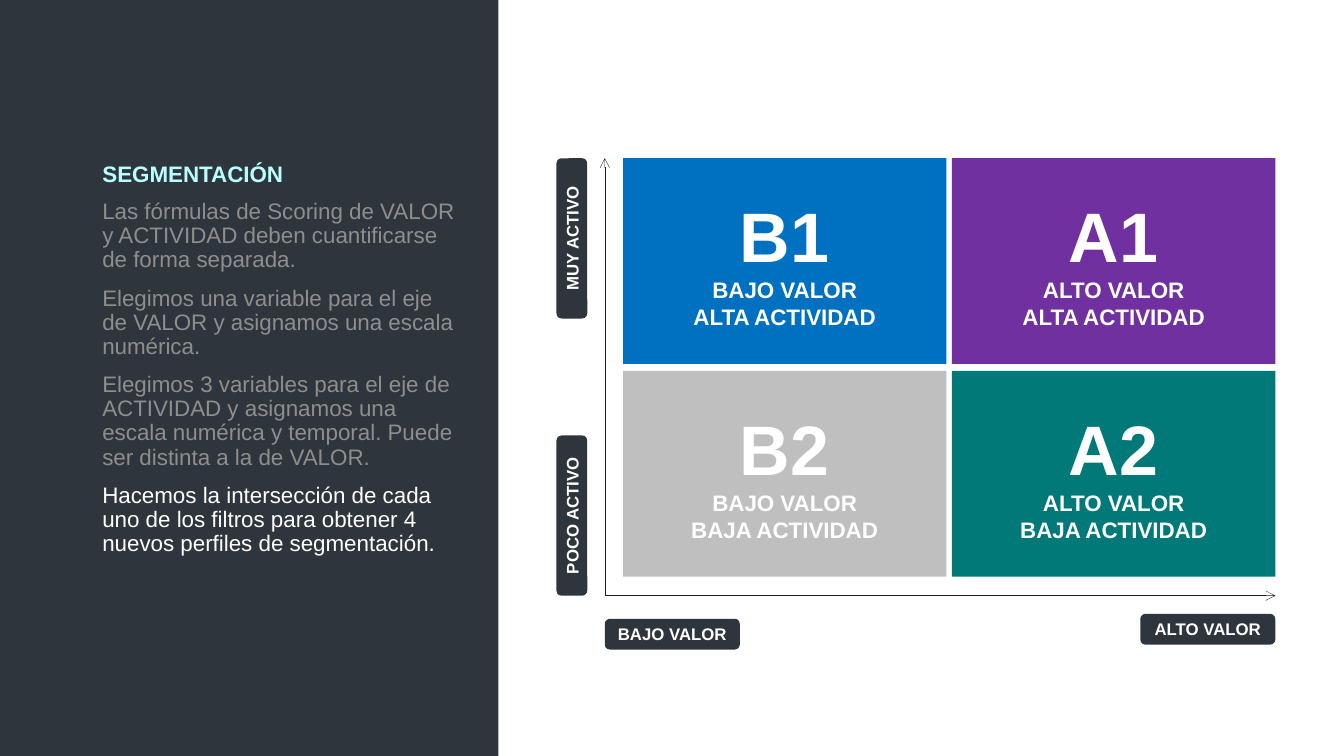
from lxml import etree
from pptx import Presentation
from pptx.dml.color import RGBColor
from pptx.enum.shapes import MSO_CONNECTOR, MSO_SHAPE
from pptx.enum.text import MSO_ANCHOR, MSO_AUTO_SIZE, PP_ALIGN
from pptx.oxml.ns import qn
from pptx.util import Pt

DARK = RGBColor(0x2F, 0x35, 0x3D)
WHITE = RGBColor(0xFF, 0xFF, 0xFF)
AQUA = RGBColor(0xB9, 0xFF, 0xFF)
GRAY = RGBColor(0x8E, 0x8E, 0x8E)
AXIS = RGBColor(0x1C, 0x1C, 0x1C)
BLUE = RGBColor(0x00, 0x70, 0xC0)
PURPLE = RGBColor(0x70, 0x30, 0xA0)
SILVER = RGBColor(0xBF, 0xBF, 0xBF)
TEAL = RGBColor(0x01, 0x79, 0x78)

TOP, RIGHT = 113, 911
AXIS_X, AXIS_Y = 432, 425.5
CELL_X, CELL_W, CELL_H = 445, 231, 147
STEP_X, STEP_Y = 235, 152
TEXT_X, TEXT_W = 66, 266
LABEL_H, LABEL_W, SIDE_LABEL_W = 22, 96.5, 114.5
SIDE_LABEL_MID = 408.5

STEPS = [
    ("Las fórmulas de Scoring de VALOR y ACTIVIDAD deben cuantificarse de forma separada.", GRAY),
    ("Elegimos una variable para el eje de VALOR y asignamos una escala numérica.", GRAY),
    ("Elegimos 3 variables para el eje de ACTIVIDAD y asignamos una escala numérica y temporal. "
     "Puede ser distinta a la de VALOR.", GRAY),
    ("Hacemos la intersección de cada uno de los filtros para obtener 4 nuevos perfiles "
     "de segmentación.", WHITE),
]
SEGMENTS = [
    [("B1", "BAJO VALOR", "ALTA ACTIVIDAD", BLUE), ("A1", "ALTO VALOR", "ALTA ACTIVIDAD", PURPLE)],
    [("B2", "BAJO VALOR", "BAJA ACTIVIDAD", SILVER), ("A2", "ALTO VALOR", "BAJA ACTIVIDAD", TEAL)],
]


def write(tf, lines, align, spacing=1.0, before=0, anchor=MSO_ANCHOR.MIDDLE):
    frame = {"word_wrap": True, "auto_size": MSO_AUTO_SIZE.NONE, "vertical_anchor": anchor}
    for name, value in frame.items():
        setattr(tf, name, value)
    for i, (text, size, color, bold) in enumerate(lines):
        p = tf.paragraphs[0] if i == 0 else tf.add_paragraph()
        layout = {"alignment": align, "line_spacing": spacing, "space_before": Pt(before if i else 0)}
        for name, value in layout.items():
            setattr(p, name, value)
        r = p.add_run()
        r.text = text
        for name, value in {"name": "Arial", "size": Pt(size), "bold": bold}.items():
            setattr(r.font, name, value)
        r.font.color.rgb = color


def add_block(s, kind, x, y, w, h, color, lines=()):
    sp = s.shapes.add_shape(kind, Pt(x), Pt(y), Pt(w), Pt(h))
    sp.shadow.inherit = False
    sp.fill.solid()
    sp.fill.fore_color.rgb = color
    sp.line.fill.background()
    write(sp.text_frame, lines, PP_ALIGN.CENTER)
    return sp


def add_label(s, text, x, y, w=LABEL_W, rotation=0):
    sp = add_block(s, MSO_SHAPE.ROUNDED_RECTANGLE, x, y, w, LABEL_H, DARK, [(text, 12, WHITE, True)])
    sp.rotation = rotation


def add_side_label(s, text, top):
    x = SIDE_LABEL_MID - SIDE_LABEL_W / 2
    y = top + (SIDE_LABEL_W - LABEL_H) / 2
    add_label(s, text, x, y, SIDE_LABEL_W, 270)


def add_axis(s, x, y):
    line = s.shapes.add_connector(MSO_CONNECTOR.STRAIGHT, Pt(AXIS_X), Pt(AXIS_Y), Pt(x), Pt(y))
    line.line.color.rgb = AXIS
    line.line.width = Pt(0.25)
    etree.SubElement(line.line._get_or_add_ln(), qn("a:tailEnd"), type="arrow")
    etree.SubElement(line._element.spPr, qn("a:effectLst"))


def add_explanation(s):
    title = s.shapes.title
    box = {"left": Pt(TEXT_X), "top": Pt(TOP), "width": Pt(TEXT_W), "height": Pt(26)}
    for name, value in box.items():
        setattr(title, name, value)
    write(title.text_frame, [("SEGMENTACIÓN", 16, AQUA, True)], PP_ALIGN.LEFT, 0.9,
          anchor=MSO_ANCHOR.TOP)
    panel = add_block(s, MSO_SHAPE.RECTANGLE, 0, 0, 356, 540, DARK)
    title._element.addprevious(panel._element)
    body = s.shapes.add_textbox(Pt(TEXT_X), Pt(139.5), Pt(TEXT_W), Pt(346.5))
    lines = [(text, 16, color, False) for text, color in STEPS]
    write(body.text_frame, lines, PP_ALIGN.LEFT, 0.9, 10, MSO_ANCHOR.TOP)


def add_matrix(s):
    for row, segments in enumerate(SEGMENTS):
        for col, (code, value, activity, color) in enumerate(segments):
            lines = [(code, 50, WHITE, True), (value, 16, WHITE, True), (activity, 16, WHITE, True)]
            add_block(s, MSO_SHAPE.RECTANGLE, CELL_X + col * STEP_X, TOP + row * STEP_Y,
                      CELL_W, CELL_H, color, lines)


def main():
    prs = Presentation()
    prs.slide_width, prs.slide_height = Pt(960), Pt(540)
    s = prs.slides.add_slide(prs.slide_layouts[5])
    add_explanation(s)
    add_matrix(s)
    add_axis(s, AXIS_X, TOP)
    add_axis(s, RIGHT, AXIS_Y)
    add_label(s, "BAJO VALOR", AXIS_X, 442)
    add_label(s, "ALTO VALOR", RIGHT - LABEL_W, 438.5)
    add_side_label(s, "MUY ACTIVO", TOP)
    add_side_label(s, "POCO ACTIVO", AXIS_Y - SIDE_LABEL_W)
    prs.save("out.pptx")


if __name__ == "__main__":
    main()
